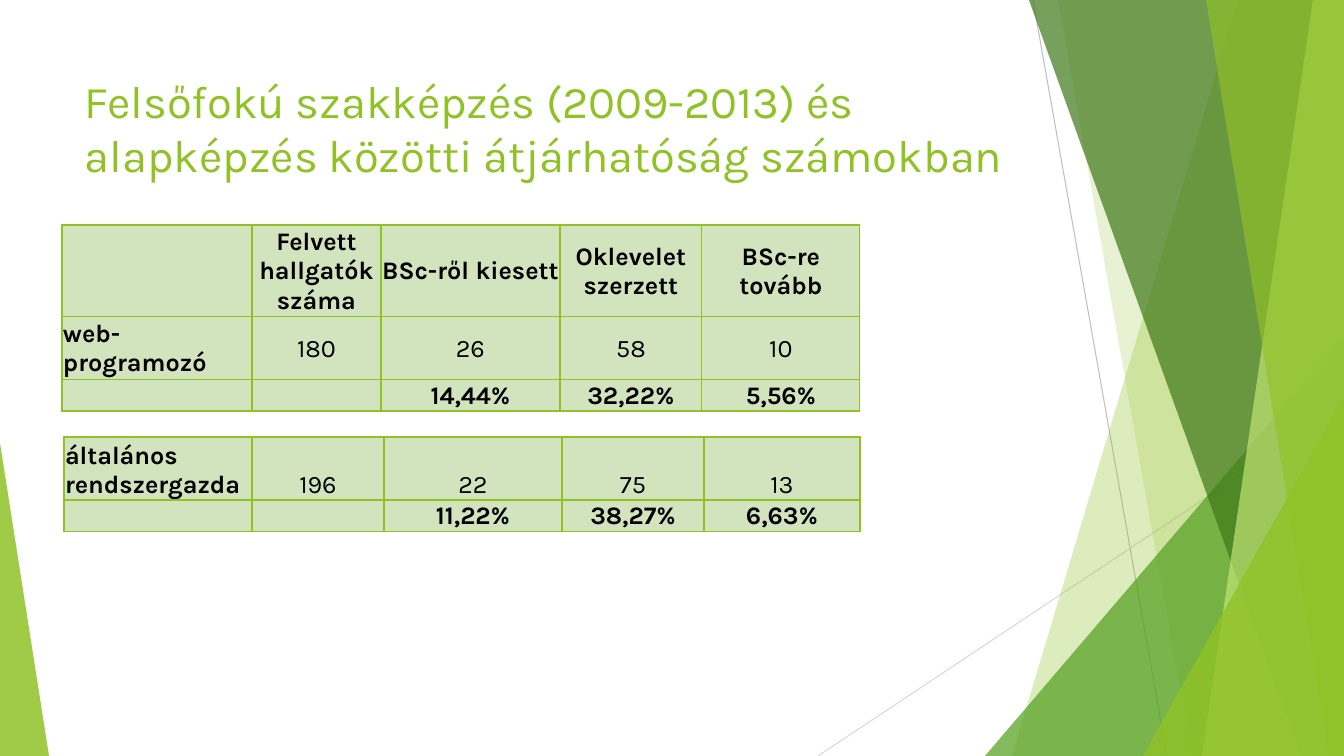
import pptx
import pptx.dml.color
import pptx.enum.shapes
import pptx.enum.text
import pptx.oxml
import pptx.oxml.ns
import pptx.util
from lxml import etree

RGBColor = pptx.dml.color.RGBColor
MSO_SHAPE = pptx.enum.shapes.MSO_SHAPE
ANCHOR = pptx.enum.text.MSO_ANCHOR
ALIGN = pptx.enum.text.PP_ALIGN
qn = pptx.oxml.ns.qn

PX = 914400 / 100.8
WIDTH, HEIGHT = 1344, 756
FONT = "Karla"
LIME = RGBColor(0x90, 0xC2, 0x26)
GREEN = RGBColor(0x54, 0xA0, 0x21)
DARK_GREEN = RGBColor(0x3F, 0x78, 0x19)
PALE_LIME = RGBColor(0xC0, 0xE4, 0x74)
CELL_GREEN = RGBColor(0xD1, 0xE4, 0xBD)
GREY = RGBColor(0xBF, 0xBF, 0xBF)
LIGHT_GREY = RGBColor(0xD9, 0xD9, 0xD9)
BLACK = RGBColor(0, 0, 0)

RAYS = [
    ((1033, 0), (1167, 756), GREY),
    ((1344, 406), (818, 756), LIGHT_GREY),
]
FACETS = [
    ("band", 1238, 1012, LIME, 30),
    ("band", 1058, 1192, LIME, 20),
    ("triangle", (985, 336, 359, 420), 1, GREEN, 72),
    ("band", 1029, 1301, DARK_GREEN, 70),
    ("band", 1313, 1202, PALE_LIME, 70),
    ("band", 1206, 1329, LIME, 65),
    ("triangle", (1143, 396, 201, 360), 1, LIME, 80),
    ("triangle", (0, 443, 49, 313), 0, LIME, 85),
]

TITLE = "Felsőfokú szakképzés (2009-2013) és alapképzés közötti átjárhatóság számokban"
WEB_ROWS = [
    ["", "Felvett hallgatók száma", "BSc-ről kiesett", "Oklevelet szerzett", "BSc-re tovább"],
    ["web-programozó", "180", "26", "58", "10"],
    ["", "", "14,44%", "32,22%", "5,56%"],
]
ADMIN_ROWS = [
    ["általános rendszergazda", "196", "22", "75", "13"],
    ["", "", "11,22%", "38,27%", "6,63%"],
]


def emu(*lengths):
    return [pptx.util.Emu(round(length * PX)) for length in lengths]


def paint(shape, color, opacity):
    shape.shadow.inherit = False
    shape.line.fill.background()
    shape.fill.solid()
    shape.fill.fore_color.rgb = color
    tint = shape.fill._xPr.find(".//" + qn("a:srgbClr"))
    etree.SubElement(tint, qn("a:alpha")).set("val", str(opacity * 1000))


def add_ray(page, start, end, color):
    ray = page.shapes.add_connector(
        pptx.enum.shapes.MSO_CONNECTOR.STRAIGHT, *emu(*start, *end))
    ray.line.color.rgb = color
    ray.line.width = pptx.util.Pt(0.75)
    etree.SubElement(ray._element.spPr, qn("a:effectLst"))


def add_band(page, top_x, bottom_x, color, opacity):
    builder = page.shapes.build_freeform(top_x, 0, scale=PX)
    builder.add_line_segments(
        [(WIDTH, 0), (WIDTH, HEIGHT), (bottom_x, HEIGHT)], close=True)
    paint(builder.convert_to_shape(), color, opacity)


def add_triangle(page, box, apex, color, opacity):
    triangle = page.shapes.add_shape(MSO_SHAPE.ISOSCELES_TRIANGLE, *emu(*box))
    triangle.adjustments[0] = apex
    paint(triangle, color, opacity)


def add_backdrop(page):
    for ray in RAYS:
        add_ray(page, *ray)
    builders = {"band": add_band, "triangle": add_triangle}
    for kind, *details in FACETS:
        builders[kind](page, *details)


def add_title(page, box):
    frame = page.shapes.add_textbox(*emu(*box)).text_frame
    frame.word_wrap = True
    para = frame.paragraphs[0]
    para.text = TITLE
    para.font.name = FONT
    para.font.size = pptx.util.Pt(32.4)
    para.font.color.rgb = LIME


def add_borders(cell):
    properties = cell._tc.get_or_add_tcPr()
    for index, side in enumerate(("lnL", "lnR", "lnT", "lnB")):
        border = pptx.oxml.parse_xml(
            f'<a:{side} {pptx.oxml.ns.nsdecls("a")} w="12700"><a:solidFill>'
            f'<a:srgbClr val="{LIME}"/></a:solidFill></a:{side}>')
        properties.insert(index, border)


def fill_cell(cell, text, anchor, align, bold):
    cell.margin_left = cell.margin_right = cell.margin_top = emu(1)[0]
    cell.margin_bottom = 0
    cell.vertical_anchor = anchor
    cell.fill.solid()
    cell.fill.fore_color.rgb = CELL_GREEN
    add_borders(cell)
    para = cell.text_frame.paragraphs[0]
    para.text = text
    para.alignment = align
    para.font.name = FONT
    para.font.size = pptx.util.Pt(18)
    para.font.bold = bold
    para.font.color.rgb = BLACK


def add_figures(page, left, top, widths, heights, rows, anchor):
    table = page.shapes.add_table(
        len(rows), len(widths),
        *emu(left, top, sum(widths), sum(heights))).table
    table.first_row = table.horz_banding = False
    for column, width in zip(table.columns, emu(*widths)):
        column.width = width
    for row, height in zip(table.rows, emu(*heights)):
        row.height = height
    for r, texts in enumerate(rows):
        for c, text in enumerate(texts):
            align = ALIGN.CENTER if c else ALIGN.LEFT
            fill_cell(table.cell(r, c), text, anchor, align, not text.isdigit())


def main():
    deck = pptx.Presentation()
    deck.slide_width, deck.slide_height = emu(WIDTH, HEIGHT)
    page = deck.slides.add_slide(deck.slide_layouts[6])
    add_backdrop(page)
    add_title(page, (75, 68, 948, 145))
    add_figures(page, 62, 225, [190, 129, 179, 142, 158], [90, 63, 31],
                WEB_ROWS, ANCHOR.MIDDLE)
    add_figures(page, 64, 437, [188, 132, 178, 142, 156], [63, 31],
                ADMIN_ROWS, ANCHOR.BOTTOM)
    deck.save("out.pptx")


if __name__ == "__main__":
    main()
